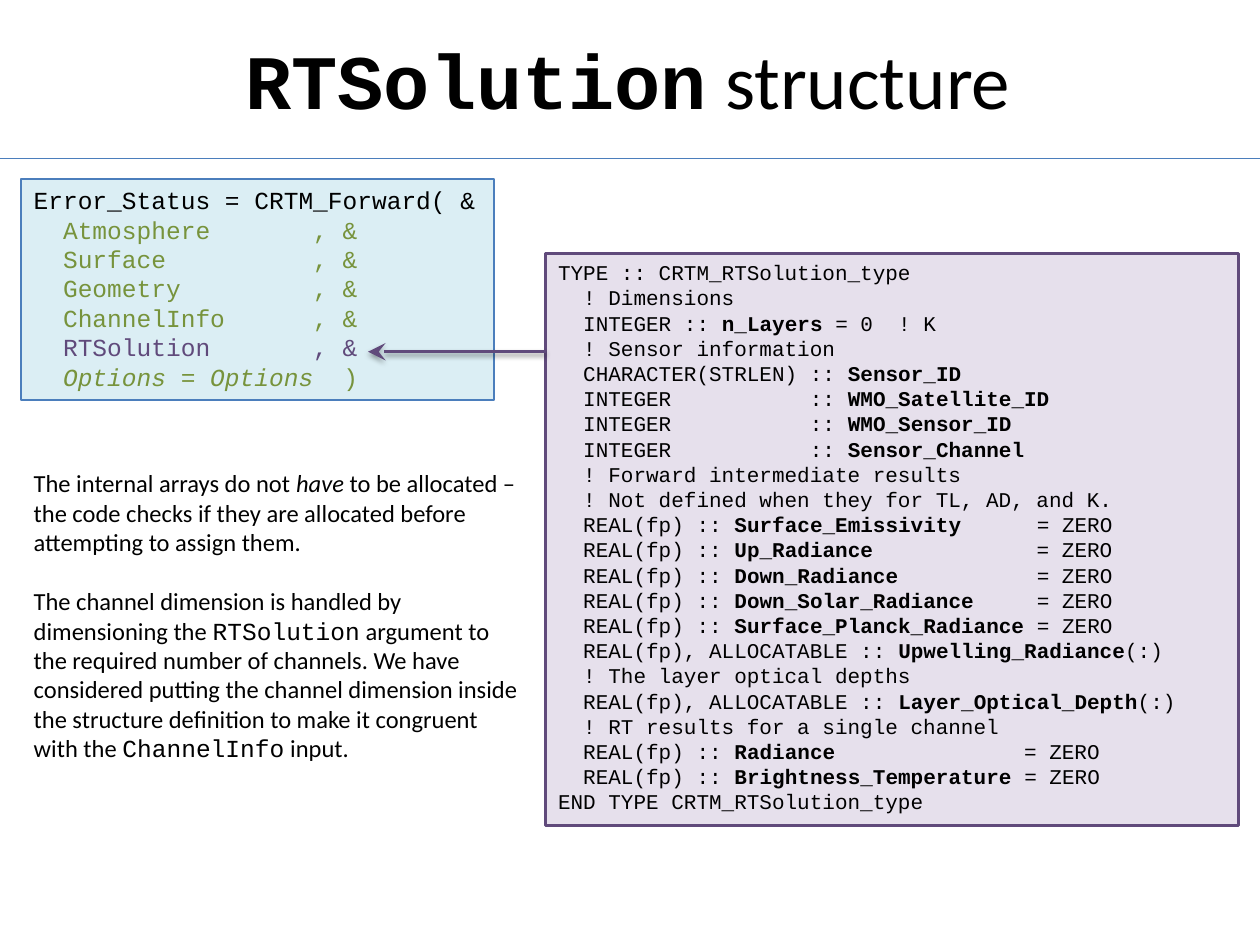
from pptx import Presentation
from pptx.dml.color import RGBColor
from pptx.enum.shapes import MSO_CONNECTOR, MSO_SHAPE
from pptx.enum.text import MSO_ANCHOR, PP_ALIGN
from pptx.oxml.ns import qn
from pptx.util import Cm, Pt
from lxml.etree import SubElement

SANS, MONO = "Calibri", "Courier New"
BLACK, BLUE, GREEN, PURPLE = "000000", "4B7EBC", "77933C", "604A7B"
PALE_BLUE, PALE_PURPLE = "DBEEF4", "E6E0EC"


def rgb(value):
    return RGBColor.from_string(value)


def run(text, **fmt):
    return text, fmt


def add_run(p, text, size=14, font=SANS, color=BLACK, bold=False, italic=False):
    r = p.add_run()
    r.text = text
    f = r.font
    f.size, f.name, f.bold, f.italic = Pt(size), font, bold, italic
    f.color.rgb = rgb(color)


def emphasised(line):
    return [run(part, bold=i % 2 == 1) for i, part in enumerate(line.split("*")) if part]


class SlideBuilder:
    def __init__(self, slide):
        self.slide = slide
        self.shapes = slide.shapes

    def start_group(self):
        self.shapes = self.slide.shapes.add_group_shape().shapes

    def title(self, runs, x, y, w, h):
        sp = self.slide.shapes.title
        sp.left, sp.top, sp.width, sp.height = Cm(x), Cm(y), Cm(w), Cm(h)
        tf = sp.text_frame
        tf.vertical_anchor = MSO_ANCHOR.MIDDLE
        p = tf.paragraphs[0]
        p.alignment = PP_ALIGN.CENTER
        for text, fmt in runs:
            add_run(p, text, size=44, **fmt)

    def fill_text(self, sp, paragraphs, size, font, gap=0):
        tf = sp.text_frame
        tf.word_wrap = True
        tf.vertical_anchor = MSO_ANCHOR.TOP
        for i, runs in enumerate(paragraphs):
            p = tf.add_paragraph() if i else tf.paragraphs[0]
            p.alignment = PP_ALIGN.LEFT
            p.line_spacing = Pt(size * 1.2)
            if i and gap:
                p.space_before = Pt(gap)
            for text, fmt in runs:
                add_run(p, text, **{"size": size, "font": font, **fmt})

    def prose(self, paragraphs, x, y, w, h):
        sp = self.shapes.add_textbox(Cm(x), Cm(y), Cm(w), Cm(h))
        self.fill_text(sp, paragraphs, 14, SANS, gap=16.8)

    def code_box(self, paragraphs, x, y, w, h, size, fill, line, width):
        sp = self.shapes.add_shape(MSO_SHAPE.RECTANGLE, Cm(x), Cm(y), Cm(w), Cm(h))
        sp.shadow.inherit = False
        sp.fill.solid()
        sp.fill.fore_color.rgb = rgb(fill)
        sp.line.color.rgb = rgb(line)
        sp.line.width = Pt(width)
        self.fill_text(sp, paragraphs, size, MONO)

    def line(self, x1, y1, x2, y2, color, width, arrow=False):
        cxn = self.shapes.add_connector(MSO_CONNECTOR.STRAIGHT, Cm(x1), Cm(y1), Cm(x2), Cm(y2))
        cxn.line.color.rgb = rgb(color)
        cxn.line.width = Pt(width)
        sp_pr = cxn._element.spPr
        effects = SubElement(sp_pr, qn("a:effectLst"))
        if arrow:
            SubElement(sp_pr.find(qn("a:ln")), qn("a:tailEnd"), type="stealth", w="lg", len="lg")
            shadow = SubElement(effects, qn("a:outerShdw"), blurRad=str(Pt(3.1)),
                                dist=str(Pt(1.6)), dir="5400000", rotWithShape="0")
            black = SubElement(shadow, qn("a:srgbClr"), val=BLACK)
            SubElement(black, qn("a:alpha"), val="38000")


CALL = [
    [run("Error_Status = CRTM_Forward( &")],
    *[[run(f"  {name:<17}, &", color=GREEN)]
      for name in ("Atmosphere", "Surface", "Geometry", "ChannelInfo")],
    [run(f"  {'RTSolution':<17}, &", color=PURPLE)],
    [run("  Options = Options  ", color=GREEN, italic=True), run(")", color=GREEN)],
]

NOTES = [
    [run("The internal arrays do not "), run("have", italic=True),
     run(" to be allocated – the code checks if they are allocated before "
         "attempting to assign them.")],
    [run("The channel dimension is handled by dimensioning the "),
     run("RTSolution", font=MONO),
     run(" argument to the required number of channels. We have considered putting "
         "the channel dimension inside the structure definition to make it congruent with the "),
     run("ChannelInfo", font=MONO), run(" input.")],
]

DEFINITION = [
    "TYPE :: CRTM_RTSolution_type",
    "  ! Dimensions",
    "  INTEGER :: *n_Layers* = 0  ! K",
    "  ! Sensor information",
    "  CHARACTER(STRLEN) :: *Sensor_ID*",
    "  INTEGER           :: *WMO_Satellite_ID*",
    "  INTEGER           :: *WMO_Sensor_ID*",
    "  INTEGER           :: *Sensor_Channel*",
    "  ! Forward intermediate results",
    "  ! Not defined when they for TL, AD, and K.",
    "  REAL(fp) :: *Surface_Emissivity*      = ZERO",
    "  REAL(fp) :: *Up_Radiance*             = ZERO",
    "  REAL(fp) :: *Down_Radiance*           = ZERO",
    "  REAL(fp) :: *Down_Solar_Radiance*     = ZERO",
    "  REAL(fp) :: *Surface_Planck_Radiance* = ZERO",
    "  REAL(fp), ALLOCATABLE :: *Upwelling_Radiance*(:)",
    "  ! The layer optical depths",
    "  REAL(fp), ALLOCATABLE :: *Layer_Optical_Depth*(:)",
    "  ! RT results for a single channel",
    "  REAL(fp) :: *Radiance*               = ZERO",
    "  REAL(fp) :: *Brightness_Temperature* = ZERO",
    "END TYPE CRTM_RTSolution_type",
]


def main():
    prs = Presentation()
    prs.slide_width, prs.slide_height = Cm(25.4), Cm(19.05)
    s = SlideBuilder(prs.slides.add_slide(prs.slide_layouts[5]))
    s.title([run("RTSolution", font=MONO, bold=True), run(" structure")], 2.92, 0, 19.48, 3.18)
    s.line(0, 3.2, 25.4, 3.2, BLUE, 0.75)
    s.code_box(CALL, 0.43, 3.61, 9.53, 4.45, 14, PALE_BLUE, BLUE, 1)
    s.prose(NOTES, 0.43, 9.32, 10.36, 6.35)
    s.start_group()
    s.code_box([emphasised(line) for line in DEFINITION],
               11, 5.11, 13.97, 11.53, 12, PALE_PURPLE, PURPLE, 1.5)
    s.line(11, 7.09, 7.42, 7.09, PURPLE, 2, arrow=True)
    prs.save("out.pptx")


if __name__ == "__main__":
    main()
